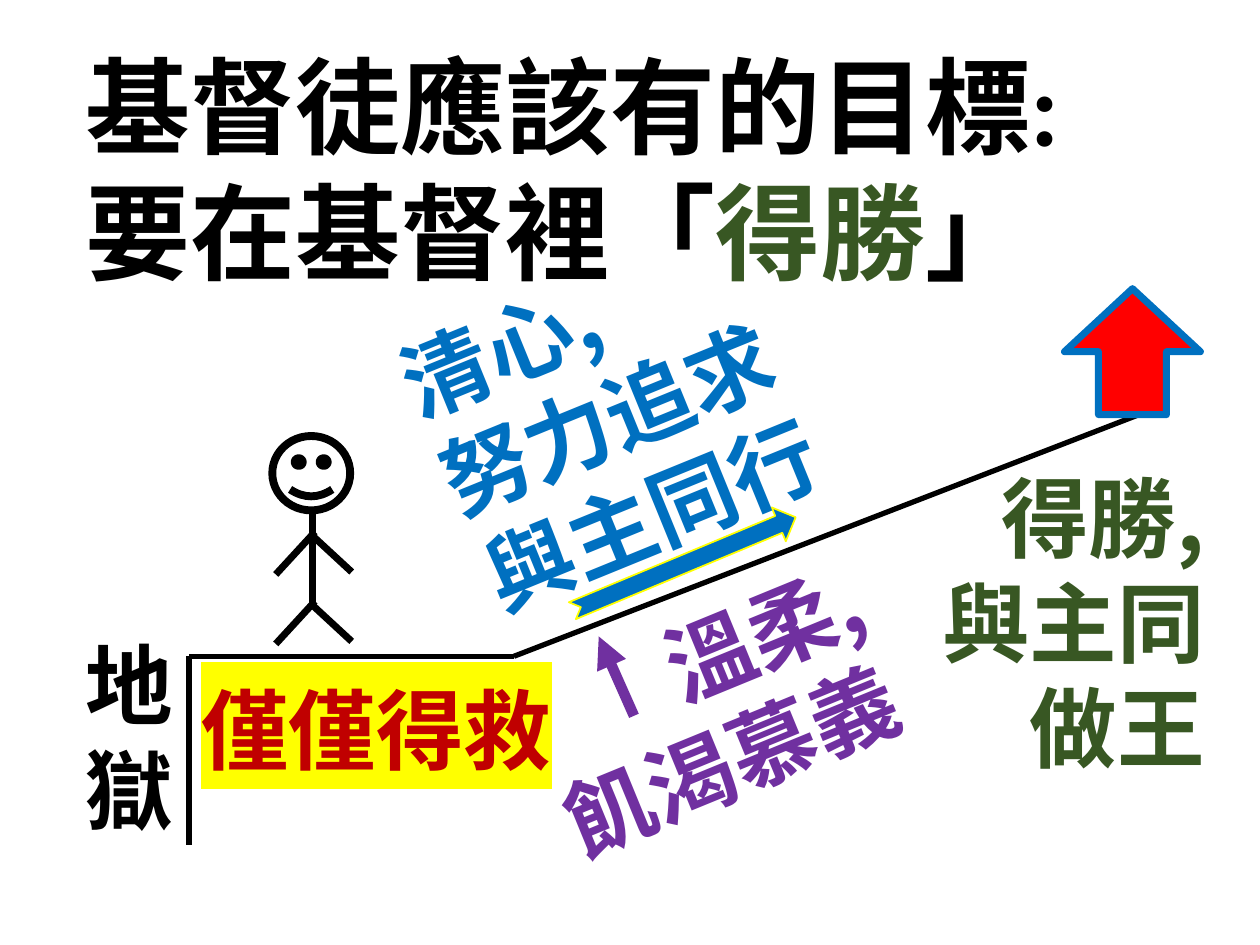
"""Builds the slide on the Christian's goal of overcoming in Christ."""
from dataclasses import dataclass
from typing import Optional

from lxml.etree import SubElement
from pptx import Presentation
from pptx.dml.color import RGBColor
from pptx.enum.shapes import MSO_CONNECTOR, MSO_SHAPE
from pptx.enum.text import MSO_AUTO_SIZE, PP_ALIGN
from pptx.oxml import parse_xml
from pptx.oxml.ns import nsdecls, qn
from pptx.util import Cm, Pt


@dataclass(frozen=True)
class Theme:
    black: str = "000000"
    green: str = "385723"
    blue: str = "0070C0"
    purple: str = "7030A0"
    red: str = "FF0000"
    dark_red: str = "C00000"
    yellow: str = "FFFF00"
    title_size: int = 60
    label_size: int = 50
    latin: str = "Calibri"
    cjk: str = "Noto Sans CJK TC"


T = Theme()
LEFT, RIGHT = PP_ALIGN.LEFT, PP_ALIGN.RIGHT


@dataclass(frozen=True)
class Run:
    text: str
    color: str
    font: str = T.cjk


@dataclass(frozen=True)
class Label:
    box: tuple[float, float, float, float]
    color: str
    lines: tuple[tuple[str, PP_ALIGN], ...]
    rotation: float = 0
    highlight: Optional[str] = None


@dataclass(frozen=True)
class Line:
    start: tuple[float, float]
    end: tuple[float, float]
    width: float
    color: str = T.black
    arrow: bool = False


@dataclass(frozen=True)
class Figure:
    kind: MSO_SHAPE
    box: tuple[float, float, float, float]
    fill: Optional[str]
    line: str
    width: float
    rotation: float = 0


LABELS = (
    Label((18.67, 9.22, 5.87, 6.68), T.green,
          (("得勝,", RIGHT), ("與主同", RIGHT), ("做王", RIGHT))),
    Label((3.81, 13.51, 7.65, 2.39), T.dark_red, (("僅僅得救", LEFT),),
          highlight=T.yellow),
    Label((1.47, 12.6, 2.29, 4.52), T.black, (("地", LEFT), ("獄", LEFT))),
    Label((8.48, 5.11, 7.65, 6.68), T.blue,
          (("清心,", LEFT), ("努力追求", LEFT), ("與主同行", RIGHT)), 337.7),
    Label((10.57, 12.07, 7.65, 4.52), T.purple,
          (("溫柔,", RIGHT), ("飢渴慕義", LEFT)), 337.7),
)
TITLE = (
    (Run("基督徒應該有的目標:", T.black, T.latin),),
    (Run("要在基督裡", T.black), Run("「", T.black, T.latin),
     Run("得勝", T.green), Run("」", T.black, T.latin)),
)
CORNER, BEND = (3.81, 13.23), (10.36, 13.23)
GROUND = (
    Line(CORNER, (3.81, 17.04), 3),
    Line(CORNER, BEND, 3),
    Line(BEND, (23.5, 8.15), 3),
)
HEAD = Figure(MSO_SHAPE.SMILEY_FACE, (5.49, 8.79, 1.57, 1.5), None, T.black, 4.5)
BODY = Line((6.3, 10.29), (6.3, 12.19), 4)
LIMB_DROPS = (0, 1.4)
ARROWS = (
    Figure(MSO_SHAPE.UP_ARROW, (21.46, 5.82, 2.74, 2.54), T.red, T.blue, 4),
    Figure(MSO_SHAPE.NOTCHED_RIGHT_ARROW, (11.35, 11, 4.88, 0.74),
           T.blue, T.yellow, 1, 337.3),
)
HUNGER = Line((12.78, 14.43), (12.07, 12.83), 6, T.purple, True)


def add_run(p, run: Run, size: int, highlight: Optional[str] = None) -> None:
    r = p.add_run()
    r.text = run.text
    r.font.size = Pt(size)
    r.font.bold = True
    r.font.color.rgb = RGBColor.from_string(run.color)
    r.font.name = run.font
    rpr = r.font._element
    latin = rpr.find(qn("a:latin"))
    latin.addnext(parse_xml(f'<a:ea {nsdecls("a")} typeface="{T.cjk}"/>'))
    if highlight:
        latin.addprevious(parse_xml(
            f'<a:highlight {nsdecls("a")}><a:srgbClr val="{highlight}"/></a:highlight>'))


def add_text_box(shapes, box: tuple, wrap: bool):
    sp = shapes.add_textbox(*map(Cm, box))
    tf = sp.text_frame
    tf.word_wrap = wrap
    tf.auto_size = MSO_AUTO_SIZE.SHAPE_TO_FIT_TEXT
    return sp


def add_paragraph(tf, index: int, align: PP_ALIGN):
    p = tf.add_paragraph() if index else tf.paragraphs[0]
    p.alignment = align
    return p


def add_title(shapes) -> None:
    tf = add_text_box(shapes, (1.47, 0.71, 23.5, 5.38), True).text_frame
    for i, runs in enumerate(TITLE):
        p = add_paragraph(tf, i, LEFT)
        for run in runs:
            add_run(p, run, T.title_size)


def add_label(shapes, label: Label) -> None:
    sp = add_text_box(shapes, label.box, False)
    sp.rotation = label.rotation
    for i, (text, align) in enumerate(label.lines):
        p = add_paragraph(sp.text_frame, i, align)
        add_run(p, Run(text, label.color), T.label_size, label.highlight)


def add_line(shapes, line: Line) -> None:
    s = shapes.add_connector(MSO_CONNECTOR.STRAIGHT,
                             *map(Cm, line.start + line.end))
    s.line.color.rgb = RGBColor.from_string(line.color)
    s.line.width = Pt(line.width)
    if line.arrow:
        SubElement(s.line._get_or_add_ln(), qn("a:tailEnd"), type="triangle")
    SubElement(s._element.spPr, qn("a:effectLst"))


def add_figure(shapes, figure: Figure) -> None:
    sp = shapes.add_shape(figure.kind, *map(Cm, figure.box))
    sp.shadow.inherit = False
    sp.rotation = figure.rotation
    if figure.fill:
        sp.fill.solid()
        sp.fill.fore_color.rgb = RGBColor.from_string(figure.fill)
    else:
        sp.fill.background()
    sp.line.color.rgb = RGBColor.from_string(figure.line)
    sp.line.width = Pt(figure.width)


def add_person(shapes) -> None:
    group = shapes.add_group_shape().shapes
    add_figure(group, HEAD)
    add_line(group, BODY)
    for drop in LIMB_DROPS:
        add_line(group, Line((6.3, 10.8 + drop), (7.09, 11.53 + drop), 4))
        add_line(group, Line((5.56, 11.58 + drop), (6.35, 10.72 + drop), 4))


def main() -> None:
    prs = Presentation()
    prs.slide_width, prs.slide_height = Cm(25.4), Cm(19.05)
    shapes = prs.slides.add_slide(prs.slide_layouts[6]).shapes
    add_title(shapes)
    for line in GROUND:
        add_line(shapes, line)
    add_person(shapes)
    for arrow in ARROWS:
        add_figure(shapes, arrow)
    for label in LABELS:
        add_label(shapes, label)
    add_line(shapes, HUNGER)
    prs.save("out.pptx")


if __name__ == "__main__":
    main()
